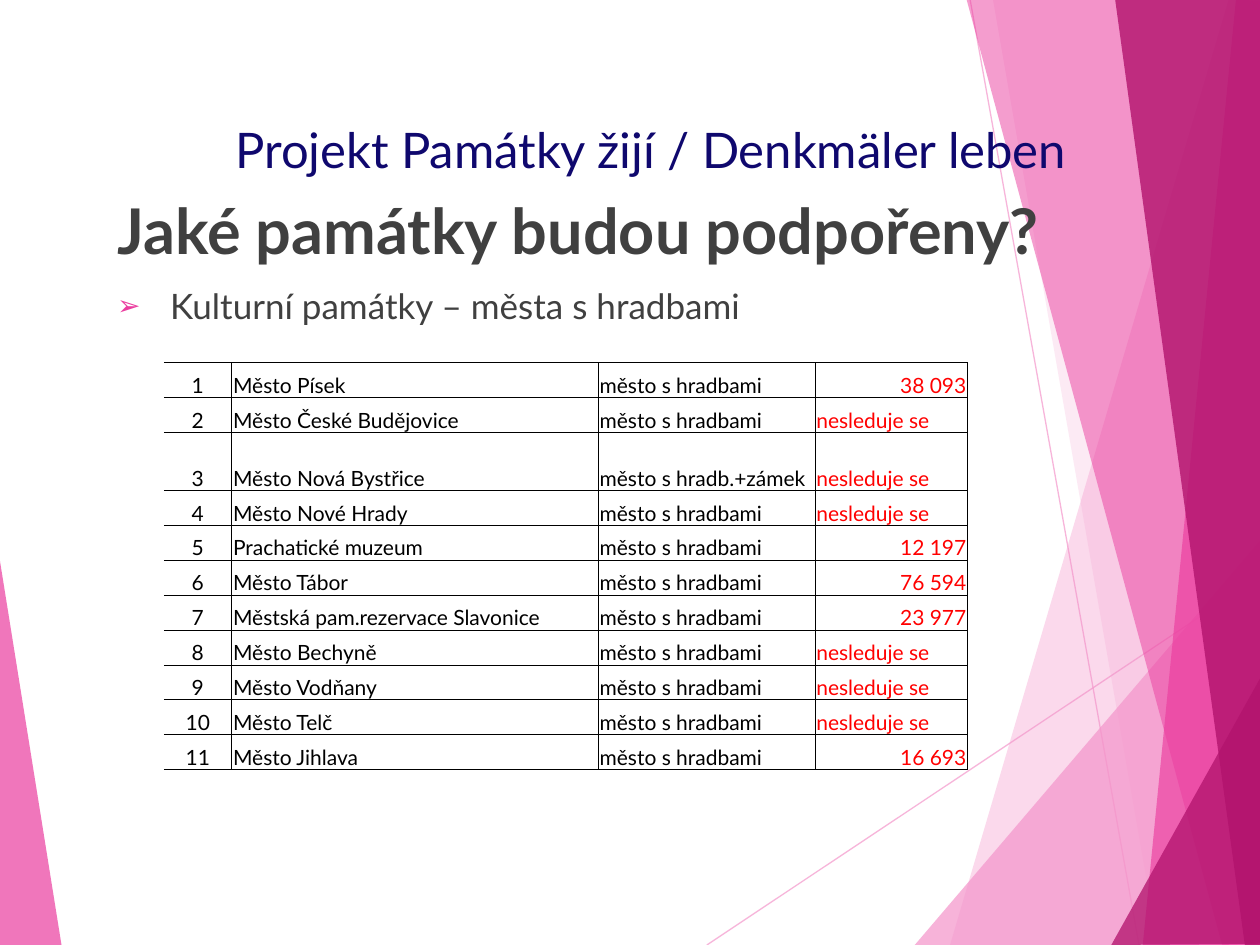
from lxml import etree
from pptx import Presentation
from pptx.dml.color import RGBColor
from pptx.enum.shapes import MSO_CONNECTOR
from pptx.enum.text import MSO_ANCHOR, MSO_AUTO_SIZE, PP_ALIGN
from pptx.oxml.ns import qn
from pptx.util import Inches, Pt

LEFT, CENTER, RIGHT = PP_ALIGN.LEFT, PP_ALIGN.CENTER, PP_ALIGN.RIGHT
TOP, BOTTOM = MSO_ANCHOR.TOP, MSO_ANCHOR.BOTTOM
STRAIGHT = MSO_CONNECTOR.STRAIGHT
NO_AUTOFIT = MSO_AUTO_SIZE.NONE

FONT = "Lato"
COLORS = {
    "light": "F496CB", "pink": "EB3D9F", "dark": "B2136D",
    "title": "0F086E", "body": "404040", "cell": "000000", "visitors": "FF0000",
}

# Background facets: corner points, colour, opacity in percent
FACETS = [
    ([(9.75, 0), (7.54, 7.5), (10.02, 7.51), (10.01, 0.01)], "light", 36),
    ([(7.88, -0.01), (9.19, 7.5), (10.01, 7.5), (10.01, -0.01)], "light", 20),
    ([(7.26, 7.5), (10, 4.29), (10.01, 7.5)], "light", 72),
    ([(7.67, -0.01), (9.7, 7.5), (10.01, 7.49), (10.01, -0.01)], "pink", 50),
    ([(9.81, -0.01), (9.07, 7.5), (10.01, 7.5), (10, -0.01)], "pink", 66),
    ([(8.85, -0.01), (9.88, 7.5), (10.02, 7.5), (10, -0.01)], "dark", 80),
    ([(8.82, 7.5), (10.02, 5.35), (10.02, 7.49)], "dark", 76),
    ([(-0.01, 4.39), (0.49, 7.51), (-0.01, 7.5)], "pink", 70),
]
RAYS = [(5.61, 7.5, 10.01, 4.57), (7.7, 0, 9.04, 7.5)]

WALLS = "město s hradbami"
UNTRACKED = "nesleduje se"
TOWNS = [
    ("Město Písek", WALLS, "38 093"),
    ("Město České Budějovice", WALLS, UNTRACKED),
    ("Město Nová Bystřice", "město s hradb.+zámek", UNTRACKED),
    ("Město Nové Hrady", WALLS, UNTRACKED),
    ("Prachatické muzeum", WALLS, "12 197"),
    ("Město Tábor", WALLS, "76 594"),
    ("Městská pam.rezervace Slavonice", WALLS, "23 977"),
    ("Město Bechyně", WALLS, UNTRACKED),
    ("Město Vodňany", WALLS, UNTRACKED),
    ("Město Telč", WALLS, UNTRACKED),
    ("Město Jihlava", WALLS, "16 693"),
]
COLUMN_WIDTHS = [0.54, 2.91, 1.72, 1.21]
TABLE_HEIGHT, TALL_ROW, TALL_HEIGHT = 3.23, 2, 0.46


def set_all(target, values):
    for name, value in values.items():
        setattr(target, name, value)


def add_xml(parent, tag, **attributes):
    return etree.SubElement(parent, qn(tag), attributes)


def set_color(color_format, color, opacity, owner):
    color_format.rgb = RGBColor.from_string(COLORS[color])
    for srgb in owner.iter(qn("a:srgbClr")):
        add_xml(srgb, "a:alpha", val=str(opacity * 1000))


def add_ray(slide, ends):
    ray = slide.shapes.add_connector(STRAIGHT, *map(Inches, ends))
    ray.line.width = Pt(0.75)
    properties = ray._element.spPr
    set_color(ray.line.color, "light", 70, properties)
    add_xml(properties, "a:effectLst")


def add_facet(slide, corners, color, opacity):
    start, *others = [(Inches(x), Inches(y)) for x, y in corners]
    builder = slide.shapes.build_freeform(*start)
    builder.add_line_segments(others, close=True)
    facet = builder.convert_to_shape()
    facet.shadow.inherit = False
    facet.line.fill.background()
    facet.fill.solid()
    set_color(facet.fill.fore_color, color, opacity, facet._element.spPr)


def write(paragraph, text, size, color, align=LEFT, bold=False):
    paragraph.alignment = align
    run = paragraph.add_run()
    run.text = text
    set_all(run.font, {"name": FONT, "size": Pt(size), "bold": bold})
    run.font.color.rgb = RGBColor.from_string(COLORS[color])


def place(slide, placeholder, left, top, width, height):
    """Position a placeholder and bring it in front of the background."""
    box = {"left": left, "top": top, "width": width, "height": height}
    set_all(placeholder, {side: Inches(value) for side, value in box.items()})
    set_all(placeholder.text_frame, {
        "word_wrap": True, "auto_size": NO_AUTOFIT, "vertical_anchor": TOP})
    slide.shapes._spTree.append(placeholder._element)
    return placeholder.text_frame


def format_item(paragraph, bullet=None):
    set_all(paragraph, {"space_before": Pt(10), "line_spacing": 1.0})
    properties = paragraph._p.get_or_add_pPr()
    indent = Inches(0.42)
    properties.set("marL", str(indent))
    properties.set("indent", str(-indent))
    if bullet is None:
        add_xml(properties, "a:buNone")
        return
    bullet_color = add_xml(properties, "a:buClr")
    add_xml(bullet_color, "a:srgbClr", val=COLORS["pink"])
    add_xml(properties, "a:buSzPct", val="80000")
    add_xml(properties, "a:buChar", char=bullet)


def set_borders(cell, visible):
    """Draw the visible sides; these go ahead of the fill in the cell."""
    properties = cell._tc.get_or_add_tcPr()
    for side in ("L", "R", "T", "B"):
        border = add_xml(properties, f"a:ln{side}", w=str(Pt(0.5)))
        if side in visible:
            fill = add_xml(border, "a:solidFill")
            add_xml(fill, "a:srgbClr", val=COLORS["cell"])
        else:
            add_xml(border, "a:noFill")


def fill_cell(cell, text, column):
    set_all(cell, {
        "margin_left": Inches(0.01), "margin_top": Inches(0.01),
        "margin_right": Inches(0.01), "margin_bottom": 0,
        "vertical_anchor": BOTTOM})
    set_borders(cell, "RTB" if column == 0 else "LRTB")
    cell.fill.background()
    color = "visitors" if column == 3 else "cell"
    align = LEFT
    if column == 0:
        align = CENTER
    elif column == 3 and text != UNTRACKED:
        align = RIGHT
    write(cell.text_frame.paragraphs[0], text, 12, color, align)


def add_town_table(slide):
    frame = slide.shapes.add_table(
        len(TOWNS), len(COLUMN_WIDTHS), Inches(1.3), Inches(2.88),
        Inches(sum(COLUMN_WIDTHS)), Inches(TABLE_HEIGHT))
    table = frame.table
    set_all(table, {"first_row": False, "horz_banding": False})
    for column, width in zip(table.columns, COLUMN_WIDTHS):
        column.width = Inches(width)
    row_height = (TABLE_HEIGHT - TALL_HEIGHT) / (len(TOWNS) - 1)
    for index, town in enumerate(TOWNS):
        height = TALL_HEIGHT if index == TALL_ROW else row_height
        table.rows[index].height = Inches(height)
        for column, text in enumerate((str(index + 1), *town)):
            fill_cell(table.cell(index, column), text, column)


def main():
    presentation = Presentation()
    set_all(presentation, {"slide_width": Inches(10), "slide_height": Inches(7.5)})
    slide = presentation.slides.add_slide(presentation.slide_layouts[1])

    # Background
    for ends in RAYS:
        add_ray(slide, ends)
    for corners, color, opacity in FACETS:
        add_facet(slide, corners, color, opacity)

    # Title
    title = place(slide, slide.shapes.title, 0.83, 0.9, 8.67, 0.49)
    write(title.paragraphs[0], "Projekt Památky žijí / Denkmäler leben",
          28, "title", CENTER)

    # Question and topic
    body = place(slide, slide.placeholders[1], 0.83, 1.47, 8.82, 5.67)
    question, topic = body.paragraphs[0], body.add_paragraph()
    format_item(question)
    write(question, "Jaké památky budou podpořeny?", 36, "body", bold=True)
    format_item(topic, "➢")
    write(topic, "Kulturní památky – města s hradbami", 20, "body")

    # Towns with their visitor numbers
    add_town_table(slide)
    presentation.save("out.pptx")


if __name__ == "__main__":
    main()
